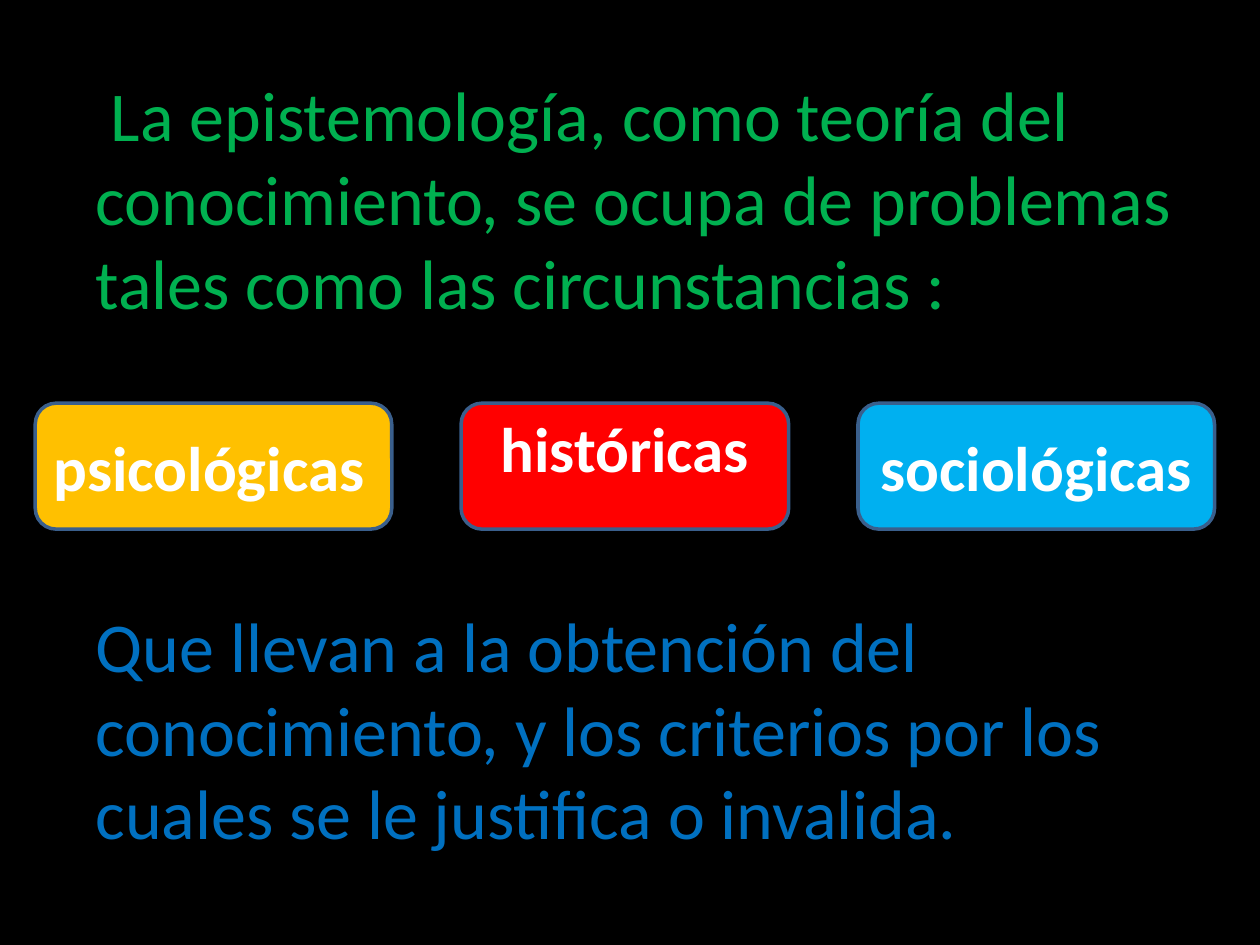
import dataclasses

import pptx
import pptx.dml.color
import pptx.enum.shapes
import pptx.enum.text
import pptx.util
from pptx.util import Inches


def rgb(code):
    return pptx.dml.color.RGBColor.from_string(code)


@dataclasses.dataclass(frozen=True)
class Theme:
    font: str = "Calibri"
    background: str = "000000"
    intro: str = "00B050"
    conclusion: str = "0070C0"
    label: str = "FFFFFF"
    outline: str = "3A5F8C"
    psychological: str = "FFC000"
    historical: str = "FF0000"
    sociological: str = "00B0F0"
    body_size: int = 40
    label_size: int = 36
    outline_width: int = 2


THEME = Theme()
ALIGN = pptx.enum.text.PP_ALIGN


def set_font(paragraph, size, color, bold=False):
    font = paragraph.font
    font.name = THEME.font
    font.size = pptx.util.Pt(size)
    font.bold = bold
    font.color.rgb = rgb(color)


def fill_body(body, left, top, width, height):
    """Two unbulleted paragraphs, with room between them for the boxes."""
    body.left, body.top, body.width, body.height = left, top, width, height
    frame = body.text_frame
    frame.word_wrap = True
    frame.auto_size = pptx.enum.text.MSO_AUTO_SIZE.NONE
    # Text, colour, first-line indent, space before in points
    passages = [
        ("La epistemología, como teoría del conocimiento, se ocupa de problemas "
         "tales como las circunstancias :", THEME.intro, Inches(0.12), 8),
        ("Que llevan a la obtención del conocimiento, y los criterios por los "
         "cuales se le justifica o invalida.", THEME.conclusion, 0, 159),
    ]
    for index, (text, color, indent, space) in enumerate(passages):
        passage = frame.add_paragraph() if index else frame.paragraphs[0]
        passage.text = text
        passage.space_before = pptx.util.Pt(space)
        set_font(passage, THEME.body_size, color)
        properties = passage._p.get_or_add_pPr()
        properties.set("marL", str(Inches(0.38)))
        properties.set("indent", str(indent))
        properties.append(pptx.oxml.parse_xml(
            '<a:buNone xmlns:a="http://schemas.openxmlformats.org/drawingml/2006/main"/>'))
        # Bullet settings come before the default run properties
        properties.append(properties.find(pptx.oxml.ns.qn("a:defRPr")))


def add_circumstances(slide, left, top, height, gap):
    """A row of rounded boxes, one for each kind of circumstance."""
    # Label, fill, width, alignment, bottom margin
    circumstances = [
        ("psicológicas", THEME.psychological, 2.83, ALIGN.LEFT, 0.05),
        ("históricas", THEME.historical, 2.6, ALIGN.CENTER, 0.35),
        ("sociológicas", THEME.sociological, 2.83, ALIGN.CENTER, 0.05),
    ]
    for label, fill, width, alignment, margin in circumstances:
        box = slide.shapes.add_shape(
            pptx.enum.shapes.MSO_SHAPE.ROUNDED_RECTANGLE,
            left, top, Inches(width), height)
        box.shadow.inherit = False
        box.fill.solid()
        box.fill.fore_color.rgb = rgb(fill)
        box.line.color.rgb = rgb(THEME.outline)
        box.line.width = pptx.util.Pt(THEME.outline_width)
        frame = box.text_frame
        frame.word_wrap = True
        frame.vertical_anchor = pptx.enum.text.MSO_ANCHOR.MIDDLE
        frame.margin_bottom = Inches(margin)
        caption = frame.paragraphs[0]
        caption.text = label
        caption.alignment = alignment
        set_font(caption, THEME.label_size, THEME.label, bold=True)
        left += box.width + gap


def main():
    deck = pptx.Presentation()
    deck.slide_width, deck.slide_height = Inches(10), Inches(7.5)
    slide = deck.slides.add_slide(deck.slide_layouts[1])
    slide.background.fill.solid()
    slide.background.fill.fore_color.rgb = rgb(THEME.background)

    # The slide has no title
    title = slide.shapes.title.element
    title.getparent().remove(title)

    fill_body(slide.placeholders[1], Inches(0.28), Inches(0.52),
              Inches(9.5), Inches(6.46))
    add_circumstances(slide, Inches(0.28), Inches(3.2), Inches(1), Inches(0.55))
    deck.save("out.pptx")


if __name__ == "__main__":
    main()
